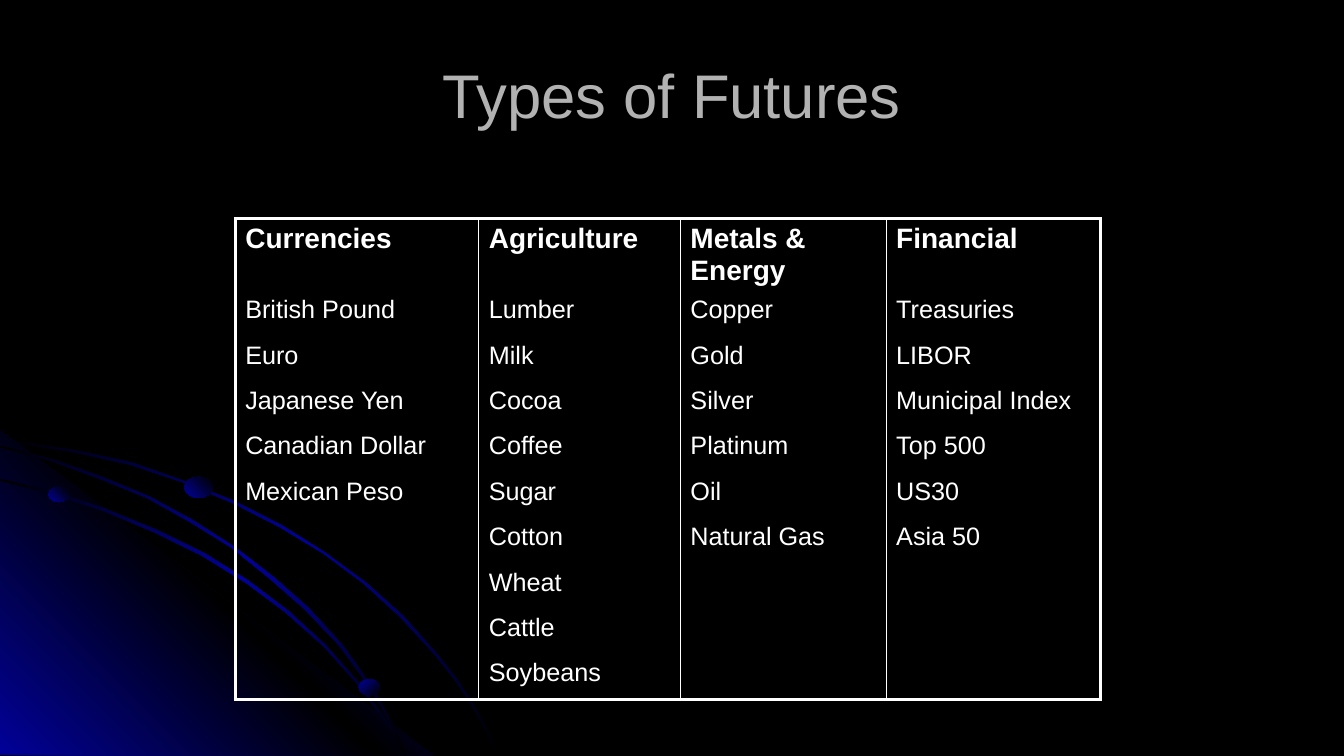
from copy import deepcopy
from itertools import zip_longest
from lxml.etree import SubElement
from pptx import Presentation
from pptx.dml.color import RGBColor
from pptx.enum.shapes import MSO_SHAPE
from pptx.enum.text import MSO_ANCHOR, PP_ALIGN
from pptx.oxml.ns import qn
from pptx.util import Pt

BLACK = RGBColor(0x00, 0x00, 0x00)
BLUE = RGBColor(0x01, 0x01, 0x99)
GRAY = RGBColor(0xB2, 0xB2, 0xB2)
WHITE = RGBColor(0xFF, 0xFF, 0xFF)
FONT = "Arial"
GRID = Pt(0.72)


def shade(shape, colors, angle):
    shape.shadow.inherit = False
    shape.line.fill.background()
    shape.fill.gradient()
    shape.fill.gradient_angle = angle
    stops = shape._element.spPr.find(".//" + qn("a:gsLst"))
    for _ in colors[2:]:
        stops.append(deepcopy(stops[0]))
    for i, (stop, color) in enumerate(zip(shape.fill.gradient_stops, colors)):
        stop.position = i / (len(colors) - 1)
        stop.color.rgb = color


def add_border(cell, side, width):
    line = SubElement(cell._tc.get_or_add_tcPr(), qn("a:" + side), w=str(Pt(width)))
    if width:
        fill = SubElement(line, qn("a:solidFill"))
        SubElement(fill, qn("a:srgbClr"), val=str(WHITE))
    else:
        SubElement(line, qn("a:noFill"))


prs = Presentation()
prs.slide_width, prs.slide_height = Pt(960), Pt(540)
slide = prs.slides.add_slide(prs.slide_layouts[5])
slide.background.fill.solid()
slide.background.fill.fore_color.rgb = BLACK

outer_arc = [
    (76, 447), (37, 441), (0, 435), (0, 438), (37, 443), (75, 449), (129, 461),
    (180, 478), (231, 499), (278, 523), (321, 549), (361, 579), (397, 612),
    (431, 649), (450, 673), (467, 698), (481, 723), (493, 749), (496, 749),
    (483, 723), (469, 698), (453, 673), (433, 648), (400, 611), (363, 578),
    (322, 548), (279, 521), (232, 497), (182, 477), (131, 459),
]
corner_glow = [(429, 749), (0, 749), (0, 427)]
inner_arc = [
    (380, 714), (392, 732), (401, 749), (404, 749), (394, 730), (382, 712),
    (355, 676), (323, 640), (286, 606), (246, 576), (203, 549), (156, 526),
    (105, 505), (54, 488), (0, 475), (0, 477), (51, 490), (103, 507),
    (153, 528), (200, 551), (244, 578), (284, 608), (321, 641), (353, 677),
]
middle_arc = [
    (0, 442), (0, 444), (49, 457), (99, 475), (146, 494), (189, 518), (231, 544),
    (269, 575), (303, 605), (337, 641), (356, 667), (374, 694), (389, 722),
    (401, 749), (404, 749), (391, 720), (376, 693), (358, 665), (339, 639),
    (306, 603), (272, 573), (233, 543), (191, 516), (149, 493), (101, 473),
    (51, 455),
]
arc_colors = [BLACK, BLUE, BLACK]
for outline, colors, angle in [
    (outer_arc, arc_colors, 315),
    (corner_glow, [BLUE, BLACK, BLUE], 45),
    (inner_arc, arc_colors, 315),
    (middle_arc, arc_colors, 315),
]:
    builder = slide.shapes.build_freeform(*outline[0], scale=GRID)
    builder.add_line_segments(outline[1:], close=True)
    shade(builder.convert_to_shape(), colors, angle)

for left, top, width, height, angle in [
    (34.6, 347.8, 14.4, 10.8, 45),
    (256.3, 485.3, 15.1, 11.5, 315),
    (131.8, 340.6, 20.2, 15.1, 45),
]:
    bead = slide.shapes.add_shape(
        MSO_SHAPE.OVAL, Pt(left), Pt(top), Pt(width), Pt(height))
    shade(bead, [BLUE, BLACK], angle)

heading = slide.shapes.title
heading.left, heading.top, heading.width, heading.height = (
    Pt(156), Pt(43.2), Pt(648), Pt(47.5))
heading.text_frame.vertical_anchor = MSO_ANCHOR.MIDDLE
paragraph = heading.text_frame.paragraphs[0]
paragraph.alignment = PP_ALIGN.CENTER
run = paragraph.add_run()
run.text = "Types of Futures"
run.font.name, run.font.size, run.font.color.rgb = FONT, Pt(44), GRAY

futures = {
    "Currencies": ["British Pound", "Euro", "Japanese Yen", "Canadian Dollar",
                   "Mexican Peso"],
    "Agriculture": ["Lumber", "Milk", "Cocoa", "Coffee", "Sugar", "Cotton",
                    "Wheat", "Cattle", "Soybeans"],
    "Metals & Energy": ["Copper", "Gold", "Silver", "Platinum", "Oil",
                        "Natural Gas"],
    "Financial": ["Treasuries", "LIBOR", "Municipal Index", "Top 500", "US30",
                  "Asia 50"],
}
rows = [list(futures), *zip_longest(*futures.values(), fillvalue="")]
column_widths = [174, 144, 147, 153]
header_height, row_height = 51.8, 32.4
last_row, last_column = len(rows) - 1, len(column_widths) - 1

table = slide.shapes.add_table(
    len(rows), len(column_widths), Pt(168), Pt(156), Pt(sum(column_widths)),
    Pt(header_height + row_height * last_row)).table
table.first_row = table.horz_banding = False
for column, width in zip(table.columns, column_widths):
    column.width = Pt(width)

for r, entries in enumerate(rows):
    table.rows[r].height = Pt(row_height if r else header_height)
    for c, entry in enumerate(entries):
        cell = table.cell(r, c)
        add_border(cell, "lnL", 1 if c else 2.25)
        add_border(cell, "lnR", 1 if c < last_column else 2.25)
        add_border(cell, "lnT", 0 if r else 2.25)
        add_border(cell, "lnB", 0 if r < last_row else 2.25)
        cell.fill.background()
        if entry:
            run = cell.text_frame.paragraphs[0].add_run()
            run.text = entry
            run.font.name, run.font.color.rgb = FONT, WHITE
            run.font.size = Pt(18 if r else 20)
            run.font.bold = r == 0

prs.save("out.pptx")
